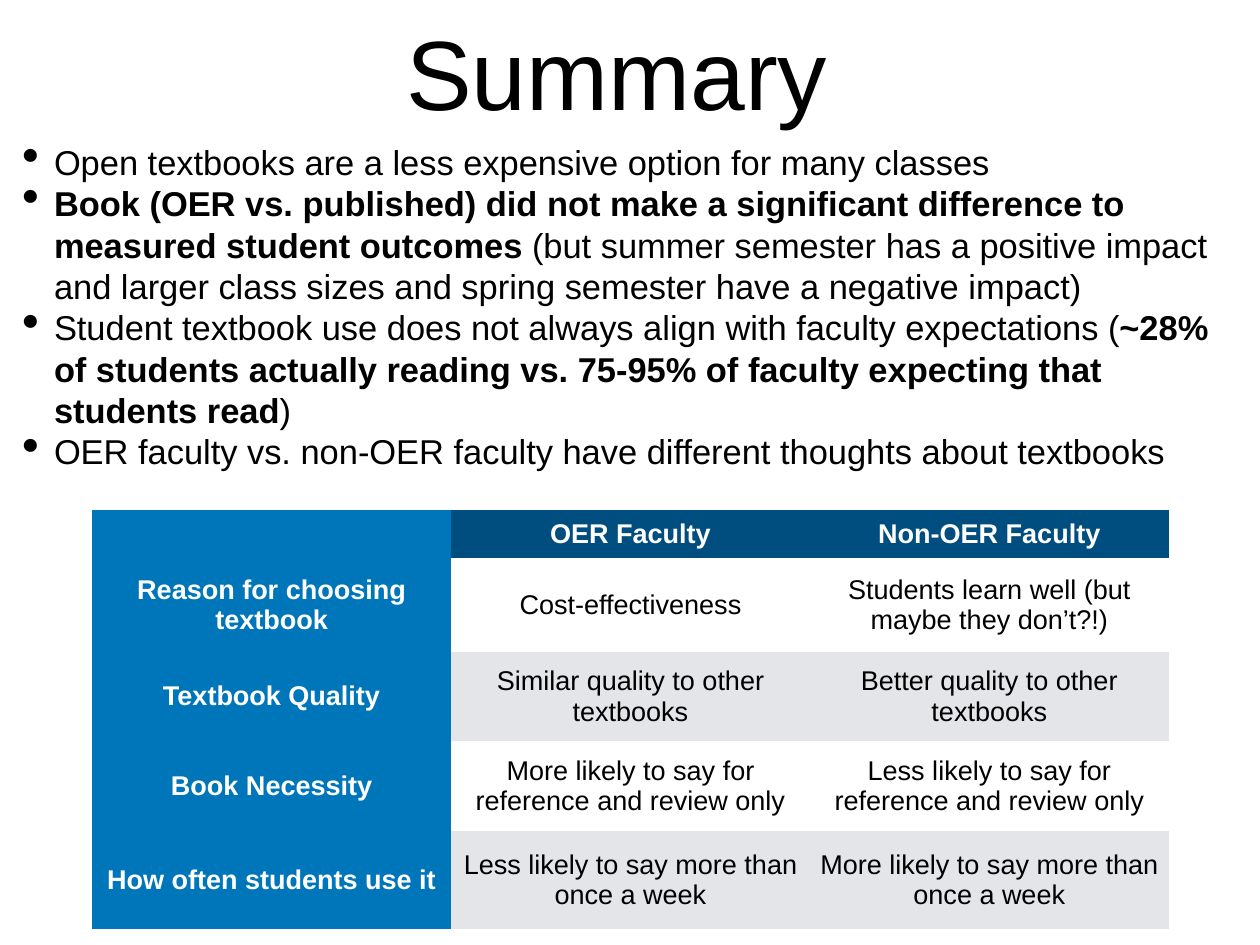
from lxml import etree
from pptx import Presentation
from pptx.dml.color import RGBColor
from pptx.enum import text
from pptx.oxml.ns import qn
from pptx.util import Inches, Pt

BLACK = RGBColor(0x00, 0x00, 0x00)
WHITE = RGBColor(0xFF, 0xFF, 0xFF)
NAVY = RGBColor(0x00, 0x4D, 0x80)
BLUE = RGBColor(0x00, 0x76, 0xBA)
GRAY = RGBColor(0xE3, 0xE5, 0xE8)
FONT = "Arial"
INSET = Inches(0.06)

TITLE = "Summary "
# Each bullet is a list of (wording, bold) spans.
BULLETS = [
    [("Open textbooks are a less expensive option for many classes", False)],
    [("Book (OER vs. published) did not make a significant difference to "
      "measured student outcomes", True),
     (" (but summer semester has a positive impact and larger class sizes "
      "and spring semester have a negative impact)", False)],
    [("Student textbook use does not always align with faculty expectations (", False),
     ("~28% of students actually reading vs. 75-95% of faculty expecting that "
      "students read", True),
     (")", False)],
    [("OER faculty vs. non-OER faculty have different thoughts about textbooks", False)],
]
COMPARISON = [
    ("", "OER Faculty", "Non-OER Faculty"),
    ("Reason for choosing textbook", "Cost-effectiveness",
     "Students learn well (but maybe they don’t?!)"),
    ("Textbook Quality", "Similar quality to other textbooks",
     "Better quality to other textbooks"),
    ("Book Necessity", "More likely to say for reference and review only",
     "Less likely to say for reference and review only"),
    ("How often students use it", "Less likely to say more than once a week",
     "More likely to say more than once a week"),
]
ROW_HEIGHTS = [0.54, 1.06, 1.01, 1.01, 1.11]
COLUMN_WIDTH = 4.05


def set_insets(holder):
    holder.margin_left = holder.margin_right = INSET
    holder.margin_top = holder.margin_bottom = INSET
    holder.vertical_anchor = text.MSO_ANCHOR.MIDDLE


def set_font(font, size, color, bold=None):
    font.name, font.size, font.bold = FONT, Pt(size), bold
    font.color.rgb = color


def add_bullet(para):
    props = para._p.get_or_add_pPr()
    props.set("marL", str(Inches(0.36)))
    props.set("indent", str(-Inches(0.36)))
    size = etree.Element(qn("a:buSzPct"), val="145000")
    mark = etree.Element(qn("a:buChar"), char="•")
    props[:0] = [size, mark]


def add_title(slide):
    title = slide.shapes.title
    title.left, title.top = Inches(4.46), Inches(0.09)
    title.width, title.height = Inches(5.31), Inches(1.43)
    frame = title.text_frame
    frame.text = TITLE
    frame.word_wrap = False
    frame.auto_size = text.MSO_AUTO_SIZE.NONE
    set_insets(frame)
    para = frame.paragraphs[0]
    para.alignment = text.PP_ALIGN.CENTER
    set_font(para.font, 80, BLACK)


def add_bullets(slide):
    box = slide.shapes.add_textbox(Inches(0.19), Inches(1.52), Inches(13.83), Inches(3.88))
    frame = box.text_frame
    frame.word_wrap = True
    set_insets(frame)
    for index, spans in enumerate(BULLETS):
        para = frame.add_paragraph() if index else frame.paragraphs[0]
        set_font(para.font, 28, BLACK)
        add_bullet(para)
        for wording, bold in spans:
            span = para.add_run()
            span.text = wording
            span.font.bold = bold


def cell_fill(row, column):
    if column == 0:
        return BLUE
    if row == 0:
        return NAVY
    return WHITE if row % 2 else GRAY


def add_comparison(slide):
    columns = len(COMPARISON[0])
    table = slide.shapes.add_table(
        len(COMPARISON), columns, Inches(1.04), Inches(5.76),
        Inches(COLUMN_WIDTH * columns), Inches(sum(ROW_HEIGHTS))).table
    for column in table.columns:
        column.width = Inches(COLUMN_WIDTH)
    for row, wordings in enumerate(COMPARISON):
        table.rows[row].height = Inches(ROW_HEIGHTS[row])
        for column, wording in enumerate(wordings):
            cell = table.cell(row, column)
            cell.text = wording
            cell.fill.solid()
            cell.fill.fore_color.rgb = cell_fill(row, column)
            set_insets(cell)
            heading = row == 0 or column == 0
            para = cell.text_frame.paragraphs[0]
            para.alignment = text.PP_ALIGN.CENTER
            set_font(para.font, 22, WHITE if heading else BLACK, heading)
    # Plain cells without the ruled, banded default style
    table.first_row = table.horz_banding = False
    style = table._tbl.tblPr.find(qn("a:tableStyleId"))
    style.text = "{2D5ABB26-0587-4C30-8999-92F81FD0307C}"


def main():
    deck = Presentation()
    deck.slide_width, deck.slide_height = Inches(14.22), Inches(10.67)
    slide = deck.slides.add_slide(deck.slide_layouts[5])
    add_title(slide)
    add_bullets(slide)
    add_comparison(slide)
    deck.save("out.pptx")


if __name__ == "__main__":
    main()
